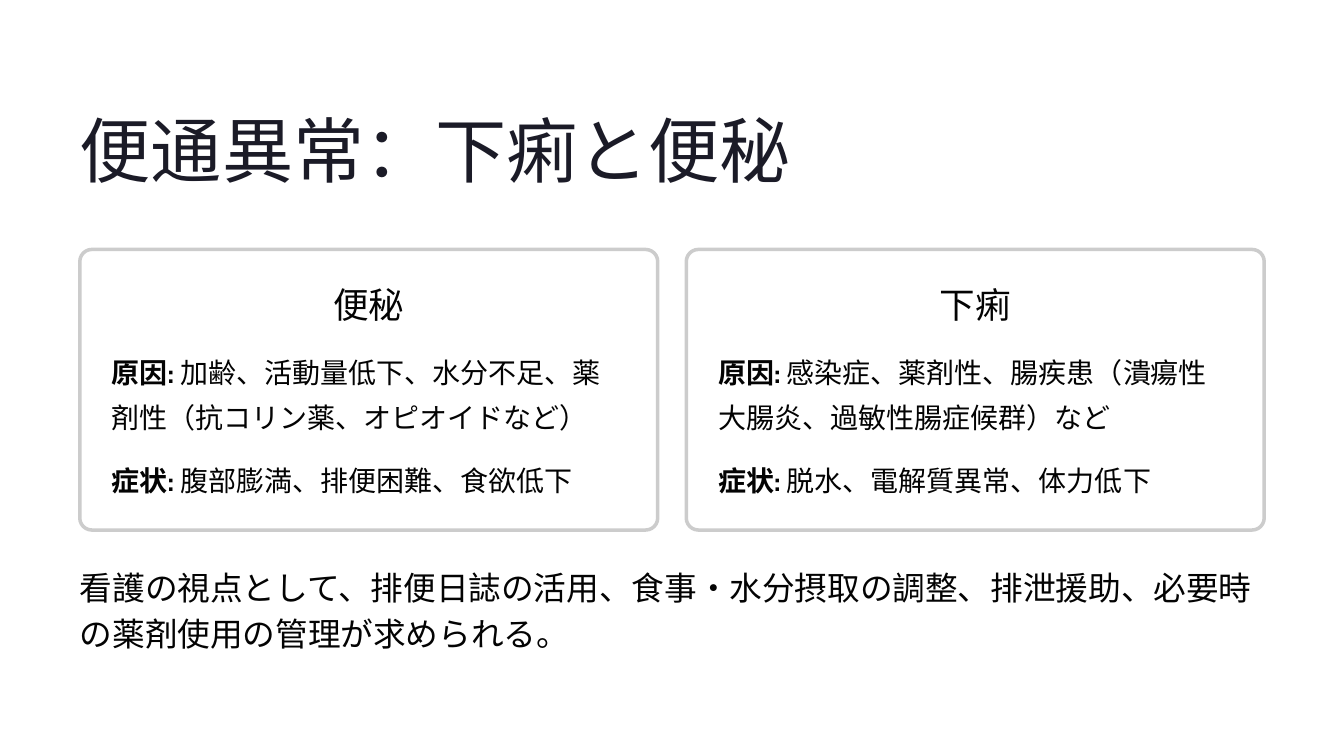
from dataclasses import dataclass

from pptx import Presentation
from pptx.dml.color import RGBColor
from pptx.enum.shapes import MSO_SHAPE as Shape
from pptx.enum.text import MSO_ANCHOR as Anchor, PP_ALIGN as Align
from pptx.slide import Slide
from pptx.util import Inches, Pt

COLORS = {"title": "1B1B27", "text": "030303", "border": "CCCCCC", "card": "FFFFFF"}
HEADING_FONT, BODY_FONT = "Inter", "Cabin"
MARGIN = 0.95
CARD_TOP, CARD_WIDTH, CARD_HEIGHT, CARD_PITCH = 2.97, 6.88, 3.34, 7.22
CARD_PADDING, HEADING_INSET = 0.38, 1.31


@dataclass(frozen=True)
class Style:
    font: str
    size: float
    line_spacing: float
    color: str = "text"
    align: Align = Align.LEFT


@dataclass(frozen=True)
class Card:
    heading: str
    causes: str
    symptoms: str


TITLE = Style(HEADING_FONT, 61, 76.5, "title")
CARD_HEADING = Style(HEADING_FONT, 30.5, 38, align=Align.CENTER)
CARD_BODY = Style(BODY_FONT, 24, 39)
SUMMARY = Style(BODY_FONT, 28, 39)

CARDS = [
    Card("便秘", "加齢、活動量低下、水分不足、薬剤性（抗コリン薬、オピオイドなど）",
         "腹部膨満、排便困難、食欲低下"),
    Card("下痢", "感染症、薬剤性、腸疾患（潰瘍性大腸炎、過敏性腸症候群）など",
         "脱水、電解質異常、体力低下"),
]


def add_text(slide: Slide, left: float, top: float, width: float, height: float,
             text: str, style: Style, wrap: bool = False, label: str = "") -> None:
    box = slide.shapes.add_textbox(*map(Inches, (left, top, width, height)))
    frame = box.text_frame
    frame.margin_left = frame.margin_right = frame.margin_top = frame.margin_bottom = 0
    frame.vertical_anchor = Anchor.TOP
    frame.word_wrap = wrap
    paragraph = frame.paragraphs[0]
    paragraph.alignment = style.align
    paragraph.line_spacing = Pt(style.line_spacing)
    paragraph.font.name = style.font
    paragraph.font.size = Pt(style.size)
    paragraph.font.color.rgb = RGBColor.from_string(COLORS[style.color])
    if label:
        label_run = paragraph.add_run()
        label_run.text = f"{label}:"
        label_run.font.bold = True
        text = f" {text}"
    paragraph.add_run().text = text


def add_card(slide: Slide, left: float, card: Card) -> None:
    # Outlined panel
    panel = slide.shapes.add_shape(
        Shape.ROUNDED_RECTANGLE,
        *map(Inches, (left, CARD_TOP, CARD_WIDTH, CARD_HEIGHT)))
    panel.adjustments[0] = 0.043
    panel.shadow.inherit = False
    panel.fill.solid()
    panel.fill.fore_color.rgb = RGBColor.from_string(COLORS["card"])
    panel.line.color.rgb = RGBColor.from_string(COLORS["border"])
    panel.line.width = Pt(3)

    # Heading and labelled lines
    add_text(slide, left + HEADING_INSET, 3.35, CARD_WIDTH - 2 * HEADING_INSET, 0.53,
             card.heading, CARD_HEADING)
    body_left, body_width = left + CARD_PADDING, CARD_WIDTH - 2 * CARD_PADDING
    add_text(slide, body_left, 4.09, body_width, 1.09, card.causes, CARD_BODY,
             wrap=True, label="原因")
    add_text(slide, body_left, 5.38, body_width, 0.54, card.symptoms, CARD_BODY,
             label="症状")


def main() -> None:
    presentation = Presentation()
    presentation.slide_width, presentation.slide_height = Inches(16), Inches(9)
    slide = presentation.slides.add_slide(presentation.slide_layouts[6])

    # Title
    add_text(slide, MARGIN, 1.22, 8.51, 1.06, "便通異常：下痢と便秘", TITLE)

    # Cards side by side
    for index, card in enumerate(CARDS):
        add_card(slide, MARGIN + index * CARD_PITCH, card)

    # Nursing summary
    add_text(slide, MARGIN, 6.69, 14.09, 1.09,
             "看護の視点として、排便日誌の活用、食事・水分摂取の調整、排泄援助、"
             "必要時の薬剤使用の管理が求められる。", SUMMARY, wrap=True)

    presentation.save("out.pptx")


if __name__ == "__main__":
    main()
